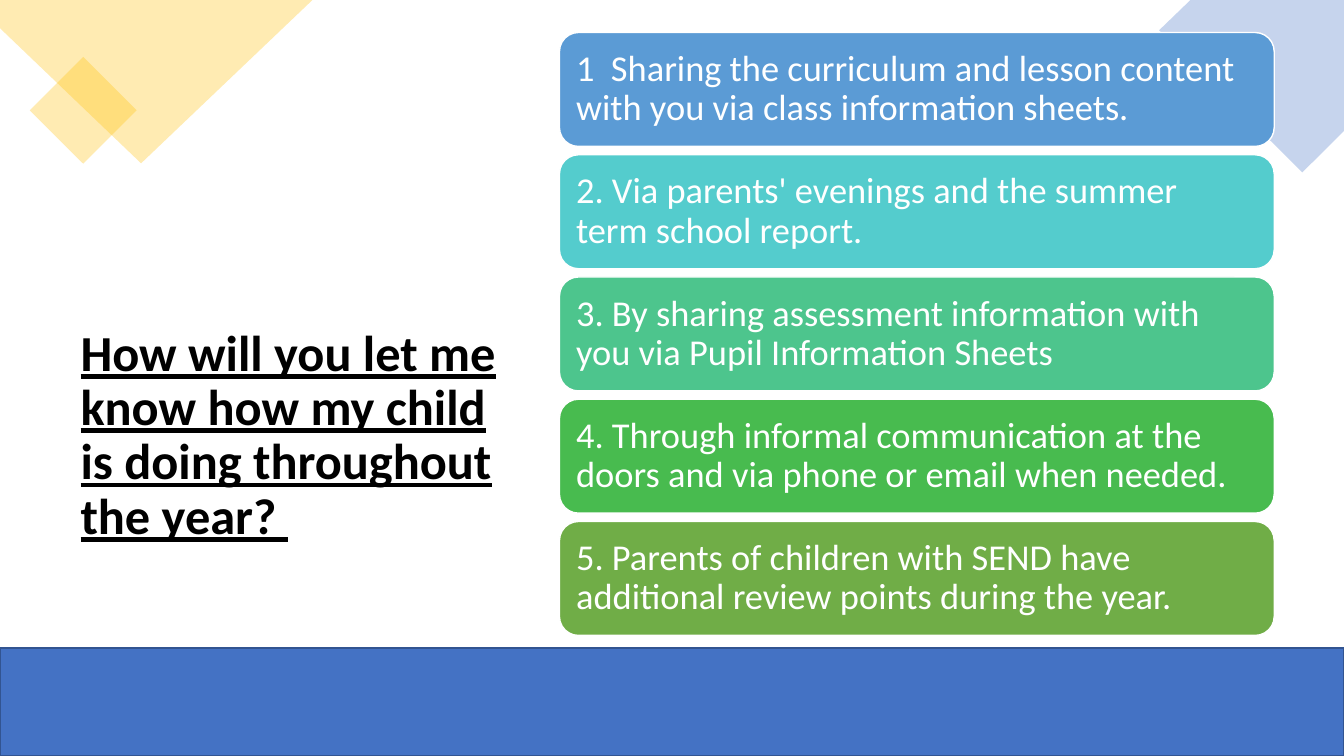
from pptx import Presentation
from pptx.dml.color import RGBColor
from pptx.enum.shapes import MSO_SHAPE
from pptx.enum.text import MSO_ANCHOR, PP_ALIGN
from pptx.oxml.ns import qn
from pptx.util import Inches, Pt
from lxml import etree

RECTANGLE = MSO_SHAPE.RECTANGLE
ROUNDED = MSO_SHAPE.ROUNDED_RECTANGLE
MIDDLE = MSO_ANCHOR.MIDDLE
LEFT = PP_ALIGN.LEFT

BLACK = RGBColor(0x00, 0x00, 0x00)
WHITE = RGBColor(0xFF, 0xFF, 0xFF)
GOLD = RGBColor(0xFF, 0xC0, 0x00)
BLUE = RGBColor(0x44, 0x72, 0xC4)
DARK_BLUE = RGBColor(0x32, 0x54, 0x91)
SKY = RGBColor(0x5B, 0x9B, 0xD5)
TURQUOISE = RGBColor(0x54, 0xCC, 0xCD)
MINT = RGBColor(0x4D, 0xC5, 0x8D)
GREEN = RGBColor(0x48, 0xBB, 0x4F)
OLIVE = RGBColor(0x70, 0xAD, 0x47)

QUESTION = "How will you let me know how my child is doing throughout the year? "
ANSWERS = [
    ("1  Sharing the curriculum and lesson content with you via class information sheets.", SKY),
    ("2. Via parents' evenings and the summer term school report.", TURQUOISE),
    ("3. By sharing assessment information with you via Pupil Information Sheets", MINT),
    ("4. Through informal communication at the doors and via phone or email when needed.", GREEN),
    ("5. Parents of children with SEND have additional review points during the year.", OLIVE),
]
GOLD_CORNER = [(0, 0), (23.25, 0), (10.5, 21.6), (0, 3.73)]
BLUE_CORNER = [(88.58, 0), (100, 0), (100, 17.33), (96.9, 22.8), (86.25, 4)]
CARD_TOP, CARD_PITCH = 4.3, 16.17


def write(shape, text, size, color, bold=False, underline=False, inset=0.1):
    frame = shape.text_frame
    frame.word_wrap = True
    frame.vertical_anchor = MIDDLE
    frame.margin_left = frame.margin_right = Inches(inset)
    para = frame.paragraphs[0]
    para.alignment = LEFT
    para.line_spacing = 0.9
    span = para.add_run()
    span.text = text
    span.font.name = "Calibri"
    span.font.size = Pt(size)
    span.font.color.rgb = color
    span.font.bold = bold
    span.font.underline = underline


class SlidePainter:
    def __init__(self, deck):
        self.width = deck.slide_width
        self.height = deck.slide_height
        self.page = deck.slides.add_slide(deck.slide_layouts[6])

    def point(self, across, down):
        return round(self.width * across / 100), round(self.height * down / 100)

    def paint(self, shape, fill, line=None, opacity=100):
        shape.shadow.inherit = False
        shape.fill.solid()
        shape.fill.fore_color.rgb = fill
        if opacity < 100:
            color = shape.fill._xPr.find(qn("a:solidFill"))[0]
            etree.SubElement(color, qn("a:alpha"), val=str(opacity * 1000))
        if line is None:
            shape.line.fill.background()
        else:
            shape.line.color.rgb = line
            shape.line.width = Pt(1)

    def shape(self, kind, left, top, width, height, fill, **style):
        shape = self.page.shapes.add_shape(
            kind, *self.point(left, top), *self.point(width, height))
        self.paint(shape, fill, **style)
        return shape

    def outline(self, corners, fill, **style):
        points = [self.point(*corner) for corner in corners]
        builder = self.page.shapes.build_freeform(*points[0])
        builder.add_line_segments(points[1:], close=True)
        self.paint(builder.convert_to_shape(), fill, **style)

    def text(self, left, top, width, height, text, **style):
        box = self.page.shapes.add_textbox(
            *self.point(left, top), *self.point(width, height))
        write(box, text, **style)


def main():
    deck = Presentation()
    deck.slide_width, deck.slide_height = Inches(13.33), Inches(7.5)
    painter = SlidePainter(deck)

    painter.text(5.25, 24.8, 32.48, 65.87, QUESTION,
                 size=36, color=BLACK, bold=True, underline=True)
    diamond = painter.shape(RECTANGLE, 3.38, 9.6, 5.63, 10, GOLD, opacity=30)
    diamond.rotation = 45
    painter.outline(GOLD_CORNER, GOLD, opacity=30)
    painter.outline(BLUE_CORNER, BLUE, opacity=30)
    painter.shape(RECTANGLE, 0, 85.73, 100, 14.27, BLUE, line=DARK_BLUE)

    for row, (answer, color) in enumerate(ANSWERS):
        card = painter.shape(ROUNDED, 41.63, CARD_TOP + row * CARD_PITCH,
                             53.18, 15.07, color, line=WHITE)
        write(card, answer, size=26, color=WHITE, inset=0.11)

    deck.save("out.pptx")


if __name__ == "__main__":
    main()
